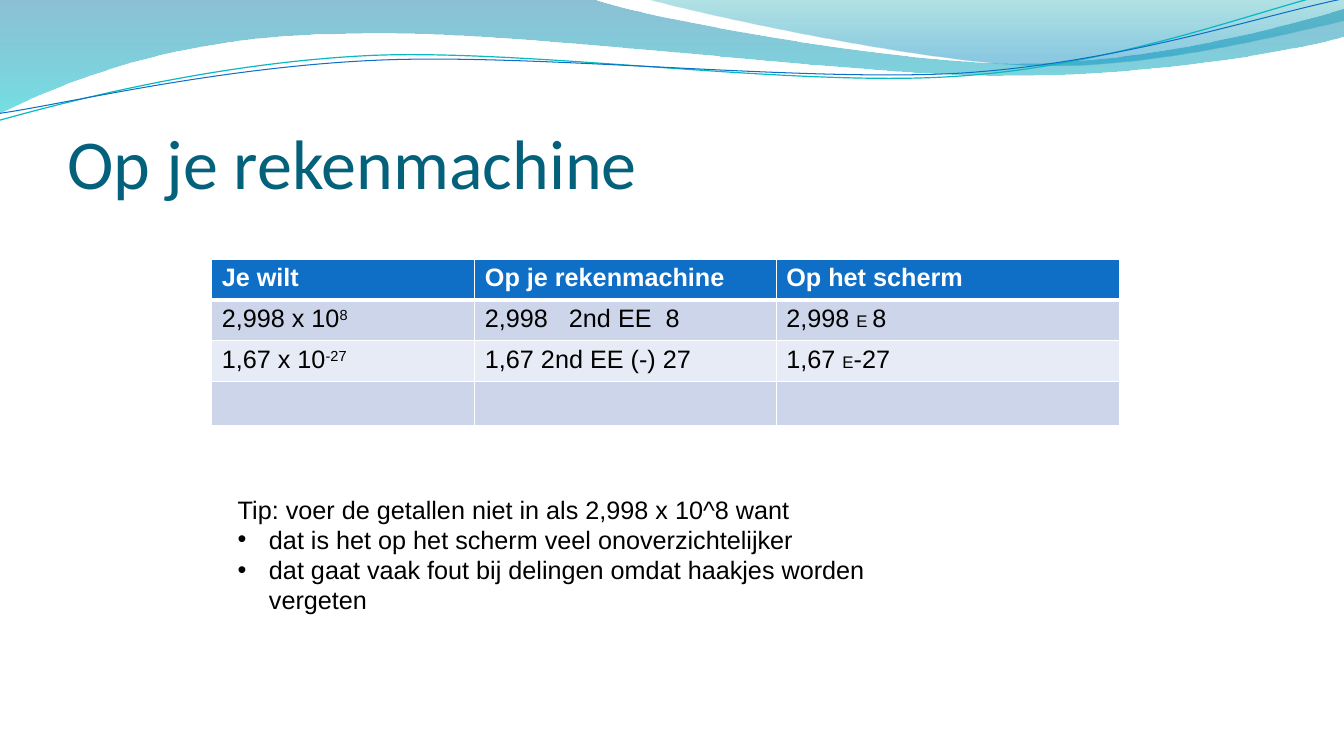
from lxml import etree
from pptx import Presentation
from pptx import util as u
from pptx.dml import color
from pptx.enum import text
from pptx.oxml import ns

COLOURS = {
    "title": "04617B", "header": "0F6FC6", "white": "FFFFFF", "black": "000000",
    "band_dark": "CCD5EA", "band_light": "E7EBF5",
    "deep_blue": "0074A1", "aqua": "00C6CF", "teal": "00A1A9", "sky": "008BBF",
    "teal_line": "0AB8BF", "blue_line": "0F6FC6",
}
STRAND_TILT = 357.3

WAVES = [
    ([(0, -0.01), (5.87, -0.01),
      (6.34, 0.17, 8.85, 0.63, 10.11, 0.63), (11.38, 0.63, 12.78, 0.26, 13.33, 0.09),
      (13.35, 0.36),
      (13.11, 0.44, 11.6, 0.76, 9.94, 0.75), (8.29, 0.75, 5.09, 0.28, 3.43, 0.34),
      (1.72, 0.35, 0.61, 0.83, -0.01, 1.13)],
     [("deep_blue", 0, 45), ("aqua", 1, 55)]),
    ([(6.39, -0.01),
      (6.79, 0.11, 9.09, 0.62, 10.25, 0.65), (11.41, 0.69, 12.82, 0.32, 13.33, 0.21),
      (13.33, 0)],
     [("teal", 0, 30), ("sky", 0.8, 45)]),
]
STRANDS = [
    ([(-0.03, 0.88),
      (0.63, 0.73, 2.11, 0.41, 3.69, 0.41), (5.28, 0.42, 7.88, 0.93, 9.49, 0.89),
      (11.09, 0.86, 12.54, 0.36, 13.33, 0.22)],
     "teal_line", 0.85),
    ([(-0.02, 0.81),
      (0.62, 0.75, 2.18, 0.45, 3.78, 0.46), (5.37, 0.47, 7.95, 0.88, 9.54, 0.86),
      (11.14, 0.83, 12.56, 0.42, 13.36, 0.3)],
     "blue_line", 0.75),
]
TABLE_ROWS = [
    [[("Je wilt", "")], [("Op je rekenmachine", "")], [("Op het scherm", "")]],
    [[("2,998 x 10", ""), ("8", "super")],
     [("2,998   2nd EE  8", "")],
     [("2,998 ", ""), ("E ", "small"), ("8", "")]],
    [[("1,67 x 10", ""), ("-27", "super")],
     [("1,67 2nd EE (-) 27", "")],
     [("1,67 ", ""), ("E", "small"), ("-27", "")]],
    [[], [], []],
]
HEADER_BORDERS = {"lnL": 1, "lnR": 1, "lnT": 1, "lnB": 3}
TIP = [
    "Tip: voer de getallen niet in als 2,998 x 10^8 want",
    "dat is het op het scherm veel onoverzichtelijker",
    "dat gaat vaak fout bij delingen omdat haakjes worden vergeten",
]


def rgb(name):
    """Return the named colour."""
    return color.RGBColor.from_string(COLOURS[name])


def style_span(span, colour, size=18, bold=False, font="Arial"):
    """Set the font, size and colour of a run."""
    span.font.name = font
    span.font.size = u.Pt(size)
    span.font.bold = bold
    span.font.color.rgb = rgb(colour)


def add_outline(page, box, outline, close):
    """Draw an outline of lines and cubic curves from the box corner."""
    points = [(u.Inches(box[0] + x), u.Inches(box[1] + y))
              for step in outline for x, y in zip(step[::2], step[1::2])]
    builder = page.shapes.build_freeform(*points[0])
    builder.add_line_segments(points[1:], close=close)
    shape = builder.convert_to_shape()
    shape.shadow.inherit = False
    segments = iter(list(shape._element.iter(ns.qn("a:lnTo"))))
    for step in outline[1:]:
        first = next(segments)
        if len(step) == 6:
            curve = etree.Element(ns.qn("a:cubicBezTo"))
            first.addprevious(curve)
            for segment in (first, next(segments), next(segments)):
                curve.append(segment[0])
                segment.getparent().remove(segment)
    return shape


def add_waves(page, box):
    """Draw the tinted waves and thin strands along the top."""
    for outline, stops in WAVES:
        wave = add_outline(page, box, outline, True)
        wave.line.fill.background()
        wave.fill.gradient()
        wave.fill.gradient_angle = 270
        for stop, (colour, position, opacity) in zip(wave.fill.gradient_stops, stops):
            stop.color.rgb = rgb(colour)
            stop.position = position
        for tint, stop in zip(wave._element.spPr.iter(ns.qn("a:srgbClr")), stops):
            etree.SubElement(tint, ns.qn("a:alpha"), val=str(stop[2] * 1000))
    for outline, colour, width in STRANDS:
        strand = add_outline(page, box, outline, False)
        strand.rotation = STRAND_TILT
        strand.fill.background()
        strand.line.color.rgb = rgb(colour)
        strand.line.width = u.Pt(width)


def add_title(page, box):
    """Place the title at the bottom of the box."""
    title = page.shapes.title
    title.left, title.top, title.width, title.height = map(u.Inches, box)
    frame = title.text_frame
    frame.text = "Op je rekenmachine"
    frame.auto_size = text.MSO_AUTO_SIZE.NONE
    frame.vertical_anchor = text.MSO_ANCHOR.BOTTOM
    frame.margin_left = frame.margin_right = frame.margin_bottom = 0
    frame.margin_top = u.Inches(0.05)
    para = frame.paragraphs[0]
    para.alignment = text.PP_ALIGN.LEFT
    style_span(para.runs[0], "title", size=50, font="Calibri")


def add_header_borders(cell):
    """Give a header cell white edges with a thick lower one."""
    props = cell._tc.get_or_add_tcPr()
    for index, (edge, width) in enumerate(HEADER_BORDERS.items()):
        line = etree.Element(ns.qn(f"a:{edge}"), w=str(u.Pt(width)))
        fill = etree.SubElement(line, ns.qn("a:solidFill"))
        etree.SubElement(fill, ns.qn("a:srgbClr"), val=COLOURS["white"])
        props.insert(index, line)


def add_key_table(page, box):
    """Fill the table of numbers, key presses and screen readings."""
    table = page.shapes.add_table(len(TABLE_ROWS), 3, *map(u.Inches, box)).table
    for column, width in zip(table.columns, (2.61, 2.99, 3.4)):
        column.width = u.Inches(width)
    for row in table.rows:
        row.height = u.Inches(1.62 / len(TABLE_ROWS))
    table.rows[len(TABLE_ROWS) - 1].height = u.Inches(0.44)
    fills = ("header", "band_dark", "band_light", "band_dark")
    for row_index, (row, fill) in enumerate(zip(TABLE_ROWS, fills)):
        is_header = row_index == 0
        for column_index, pieces in enumerate(row):
            cell = table.cell(row_index, column_index)
            cell.fill.solid()
            cell.fill.fore_color.rgb = rgb(fill)
            if is_header:
                add_header_borders(cell)
            para = cell.text_frame.paragraphs[0]
            for words, kind in pieces:
                span = para.add_run()
                span.text = words
                style_span(span, "white" if is_header else "black",
                           size=12 if kind == "small" else 18, bold=is_header)
                if kind == "super":
                    span._r.get_or_add_rPr().set("baseline", "30000")


def add_tip(page, box):
    """Write the tip with its two bulleted reasons."""
    frame = page.shapes.add_textbox(*map(u.Inches, box)).text_frame
    frame.word_wrap = True
    frame.auto_size = text.MSO_AUTO_SIZE.SHAPE_TO_FIT_TEXT
    frame.text = "\n".join(TIP)
    for index, para in enumerate(frame.paragraphs):
        style_span(para.runs[0], "black")
        if index:
            props = para._p.get_or_add_pPr()
            props.set("marL", str(u.Inches(0.31)))
            props.set("indent", str(-u.Inches(0.31)))
            etree.SubElement(props, ns.qn("a:buFont"), typeface="Arial")
            etree.SubElement(props, ns.qn("a:buChar"), char="•")


def main():
    """Build the slide and save the deck."""
    deck = Presentation()
    deck.slide_width, deck.slide_height = u.Inches(13.33), u.Inches(7.5)
    page = deck.slides.add_slide(deck.slide_layouts[5])
    page.background.fill.solid()
    page.background.fill.fore_color.rgb = rgb("white")
    add_waves(page, (0, 0))
    add_title(page, (0.67, 0.77, 12, 1.25))
    add_key_table(page, (2.1, 2.57, 9, 1.62))
    add_tip(page, (2.26, 4.85, 7.4, 2.52))
    deck.save("out.pptx")


if __name__ == "__main__":
    main()
